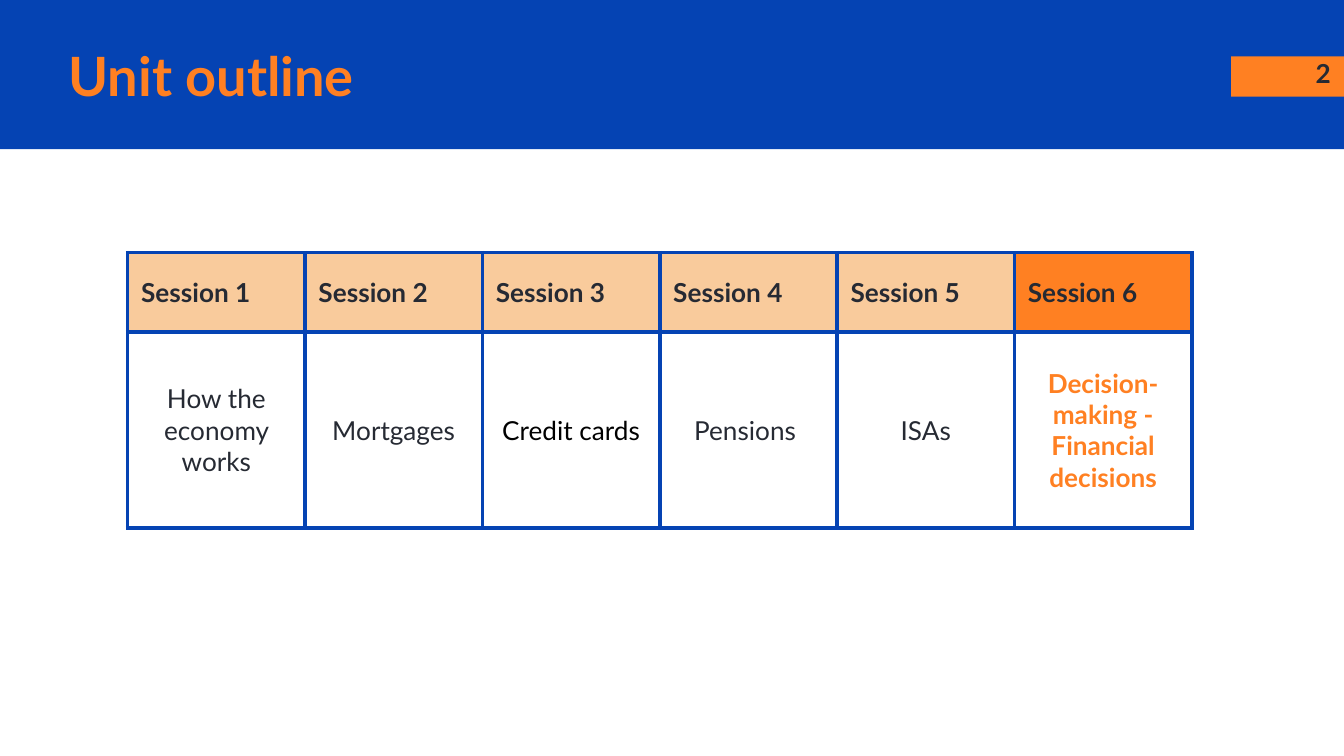
import lxml.etree
import pptx
import pptx.dml.color
import pptx.enum.shapes
import pptx.enum.text
import pptx.oxml.ns
import pptx.util

FONT = "Lato"
BLUE, ORANGE, PEACH = "0543B3", "FF8022", "F9CB9C"
INK, BLACK = "262A33", "000000"

TITLE = "Unit outline"
PAGE_NUMBER = "2"
# heading, heading fill, topic paragraphs, topic colour, topic bold
SESSIONS = [
    ("Session 1", PEACH, ["How the economy works"], INK, False),
    ("Session 2", PEACH, ["Mortgages"], INK, False),
    ("Session 3", PEACH, ["Credit cards"], BLACK, False),
    ("Session 4", PEACH, ["Pensions "], INK, False),
    ("Session 5", PEACH, ["ISAs"], INK, False),
    ("Session 6", ORANGE, ["Decision-", "making -", "Financial decisions"], ORANGE, True),
]

SLIDE_WIDTH = 10
SLIDE_HEIGHT = SLIDE_WIDTH * 9 / 16
TABLE_LEFT, TABLE_TOP = 0.95, 1.88
COLUMN_WIDTH = 1.32
ROW_HEIGHTS = [0.59, 1.46]
BORDER_WIDTH = 2.25

ALIGN = pptx.enum.text.PP_ALIGN
ANCHOR = pptx.enum.text.MSO_ANCHOR
inches = pptx.util.Inches


def color(value):
    return pptx.dml.color.RGBColor.from_string(value)


def set_margins(target, margin):
    """Give a cell or text frame the same inset on all four sides."""
    for side in ("left", "right", "top", "bottom"):
        setattr(target, f"margin_{side}", inches(margin))


def write(frame, lines, size, text_color, bold, alignment):
    for index, line in enumerate(lines):
        paragraph = frame.add_paragraph() if index else frame.paragraphs[0]
        paragraph.alignment = alignment
        run = paragraph.add_run()
        run.text = line
        run.font.name = FONT
        run.font.size = pptx.util.Pt(size)
        run.font.bold = bold
        run.font.color.rgb = color(text_color)


def add_block(slide, left, top, width, height, fill):
    shape = slide.shapes.add_shape(
        pptx.enum.shapes.MSO_SHAPE.RECTANGLE,
        inches(left), inches(top), inches(width), inches(height))
    shape.shadow.inherit = False
    shape.fill.solid()
    shape.fill.fore_color.rgb = color(fill)
    shape.line.fill.background()


def add_borders(cell):
    properties = cell._tc.get_or_add_tcPr()
    qn = pptx.oxml.ns.qn
    for side in ("a:lnL", "a:lnR", "a:lnT", "a:lnB"):
        line = lxml.etree.SubElement(
            properties, qn(side), w=str(pptx.util.Pt(BORDER_WIDTH)))
        fill = lxml.etree.SubElement(line, qn("a:solidFill"))
        lxml.etree.SubElement(fill, qn("a:srgbClr"), val=BLUE)


def fill_cell(cell, lines, text_color, bold, alignment, margin, fill=None):
    cell.vertical_anchor = ANCHOR.MIDDLE
    set_margins(cell, margin)
    write(cell.text_frame, lines, 14, text_color, bold, alignment)
    add_borders(cell)
    if fill:
        cell.fill.solid()
        cell.fill.fore_color.rgb = color(fill)
    else:
        cell.fill.background()


def add_header(slide):
    add_block(slide, 0, 0, SLIDE_WIDTH, 1.11, BLUE)
    add_block(slide, 9.16, 0.42, 0.84, 0.3, ORANGE)

    number = slide.shapes.add_textbox(inches(9.4), inches(0.33), inches(0.6), inches(0.43))
    number.text_frame.word_wrap = True
    set_margins(number.text_frame, 0.1)
    write(number.text_frame, [PAGE_NUMBER], 14, INK, True, ALIGN.RIGHT)

    title = slide.shapes.title
    title.left, title.top = inches(0.41), inches(0.28)
    title.width, title.height = inches(8.46), inches(0.56)
    frame = title.text_frame
    frame.auto_size = pptx.enum.text.MSO_AUTO_SIZE.NONE
    frame.vertical_anchor = ANCHOR.MIDDLE
    set_margins(frame, 0.1)
    write(frame, [TITLE], 29, ORANGE, True, ALIGN.LEFT)
    # Bring the title in front of the band.
    title.element.getparent().append(title.element)


def add_session_table(slide):
    table = slide.shapes.add_table(
        len(ROW_HEIGHTS), len(SESSIONS), inches(TABLE_LEFT), inches(TABLE_TOP),
        inches(COLUMN_WIDTH * len(SESSIONS)), inches(sum(ROW_HEIGHTS))).table
    table.horz_banding = False
    for row, height in zip(table.rows, ROW_HEIGHTS):
        row.height = inches(height)
    for index, (heading, fill, topic, topic_color, bold) in enumerate(SESSIONS):
        table.columns[index].width = inches(COLUMN_WIDTH)
        fill_cell(table.cell(0, index), [heading], INK, True, ALIGN.LEFT, 0.1, fill)
        fill_cell(table.cell(1, index), topic, topic_color, bold, ALIGN.CENTER, 0.07)


def main():
    presentation = pptx.Presentation()
    presentation.slide_width = inches(SLIDE_WIDTH)
    presentation.slide_height = inches(SLIDE_HEIGHT)
    slide = presentation.slides.add_slide(presentation.slide_layouts[5])
    add_header(slide)
    add_session_table(slide)
    presentation.save("out.pptx")


if __name__ == "__main__":
    main()
